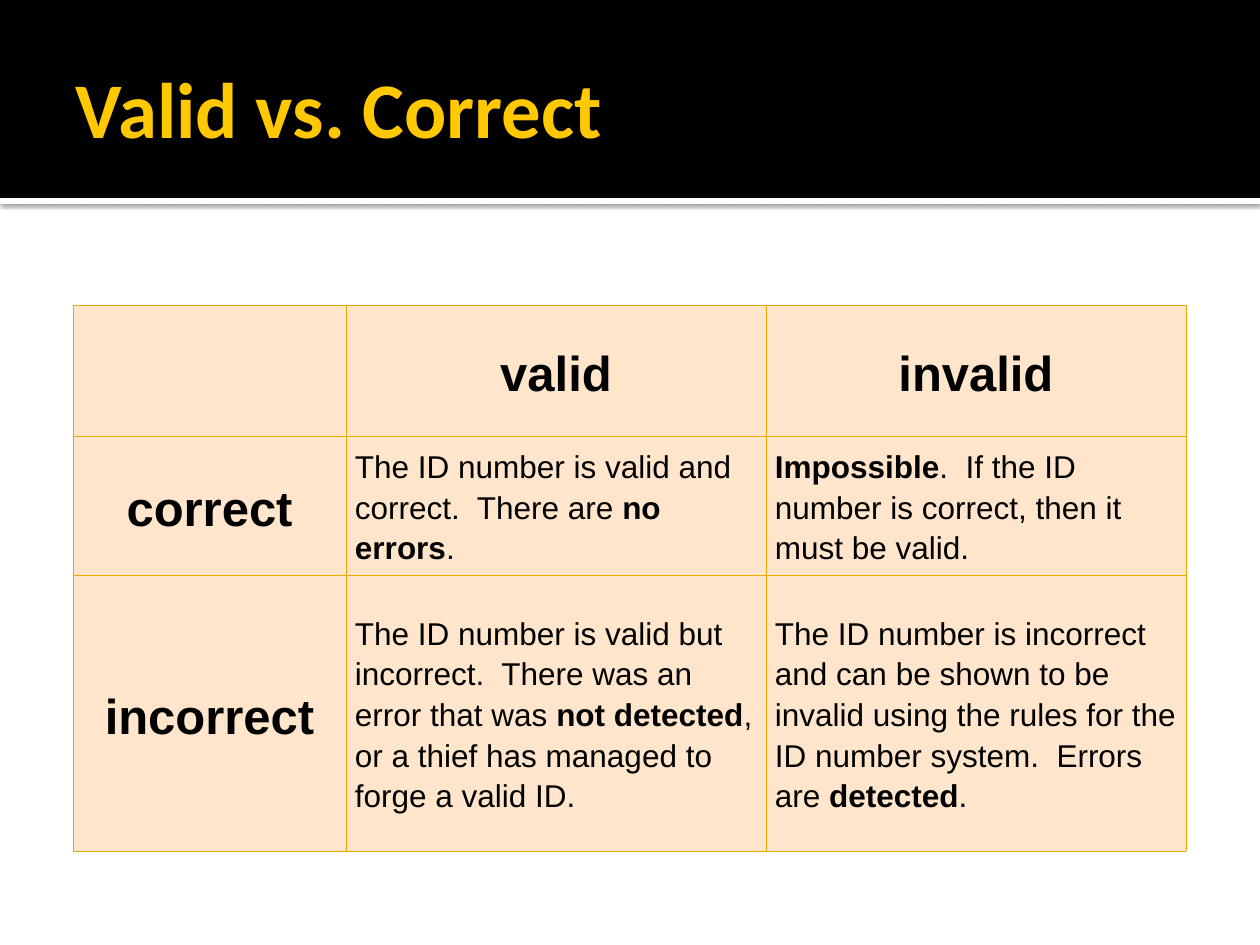
from lxml import etree
from pptx import Presentation
from pptx.dml.color import RGBColor
from pptx.enum.shapes import MSO_SHAPE
from pptx.enum.text import MSO_ANCHOR, PP_ALIGN
from pptx.oxml import parse_xml
from pptx.oxml.ns import nsdecls, qn
from pptx.util import Pt

RECT = MSO_SHAPE.RECTANGLE
MIDDLE = MSO_ANCHOR.MIDDLE
LEFT, CENTER = PP_ALIGN.LEFT, PP_ALIGN.CENTER
BLACK = RGBColor(0x00, 0x00, 0x00)
WHITE = RGBColor(0xFF, 0xFF, 0xFF)
GOLD = RGBColor(0xFF, 0xC8, 0x00)
BORDER = RGBColor(0xEB, 0xA9, 0x00)
PEACH = RGBColor(0xFF, 0xE5, 0xCC)
SCALE = 914400 / 126

COLUMNS = [273, 420, 420]
ROWS = [131, 139, 276]
CELLS = [
    ["", "**valid**", "**invalid**"],
    ["**correct**",
     "The ID number is valid and correct.  There are **no errors**.",
     "**Impossible**.  If the ID number is correct, then it must be valid."],
    ["**incorrect**",
     "The ID number is valid but incorrect.  There was an error that was "
     "**not detected**, or a thief has managed to forge a valid ID.",
     "The ID number is incorrect and can be shown to be invalid using the "
     "rules for the ID number system.  Errors are **detected**."],
]


def px(*values):
    return [round(v * SCALE) for v in values]


def add_run(p, text, color, **font):
    r = p.add_run()
    r.text = text
    r.font.color.rgb = color
    for name, value in font.items():
        setattr(r.font, name, value)


prs = Presentation()
prs.slide_width, prs.slide_height = px(1260, 945)
s = prs.slides.add_slide(prs.slide_layouts[6])

for top, height, color in [(198, 6, WHITE), (0, 198, BLACK)]:
    sp = s.shapes.add_shape(RECT, *px(0, top, 1260, height))
    sp.fill.solid()
    sp.fill.fore_color.rgb = color
    sp.line.fill.background()
    sp.shadow.inherit = False
    if color == WHITE:
        effects = sp._element.spPr.find(qn("a:effectLst"))
        effects.append(parse_xml(
            f'<a:outerShdw {nsdecls("a")} blurRad="{Pt(2.5)}" dist="{Pt(0.8)}" '
            'dir="5400000" algn="tl" rotWithShape="0"><a:srgbClr val="000000">'
            '<a:alpha val="60000"/></a:srgbClr></a:outerShdw>'))

tf = s.shapes.add_textbox(*px(63, 21, 1134, 173)).text_frame
tf.word_wrap = True
tf.vertical_anchor = MIDDLE
tf.margin_left, tf.margin_right = px(13, 6)
add_run(tf.paragraphs[0], "Valid vs. Correct", GOLD,
        name="Calibri", size=Pt(45), bold=True)

frame = s.shapes.add_table(len(ROWS), len(COLUMNS),
                           *px(73, 305, sum(COLUMNS), sum(ROWS)))
table = frame.table
for column, width in zip(table.columns, px(*COLUMNS)):
    column.width = width
for row, height in zip(table.rows, px(*ROWS)):
    row.height = height

side, = px(9)
cell_format = {"vertical_anchor": MIDDLE, "margin_left": side,
               "margin_right": side, "margin_top": 0, "margin_bottom": 0}
for i, texts in enumerate(CELLS):
    for j, text in enumerate(texts):
        cell = table.cell(i, j)
        for name, value in cell_format.items():
            setattr(cell, name, value)
        cell.fill.solid()
        cell.fill.fore_color.rgb = PEACH
        tcPr = cell._tc.get_or_add_tcPr()
        for k, edge in enumerate(["lnL", "lnR", "lnT", "lnB"]):
            ln = etree.Element(qn(f"a:{edge}"), w=str(Pt(0.5)))
            fill = etree.SubElement(ln, qn("a:solidFill"))
            etree.SubElement(fill, qn("a:srgbClr"), val=str(BORDER))
            tcPr.insert(k, ln)
        heading = i == 0 or j == 0
        p = cell.text_frame.paragraphs[0]
        p.alignment = CENTER if heading else LEFT
        p.line_spacing = 1.15
        for n, part in enumerate(text.split("**")):
            if part:
                add_run(p, part, BLACK, name="Arial",
                        size=Pt(28 if heading else 18), bold=n % 2 == 1)

prs.save("out.pptx")
